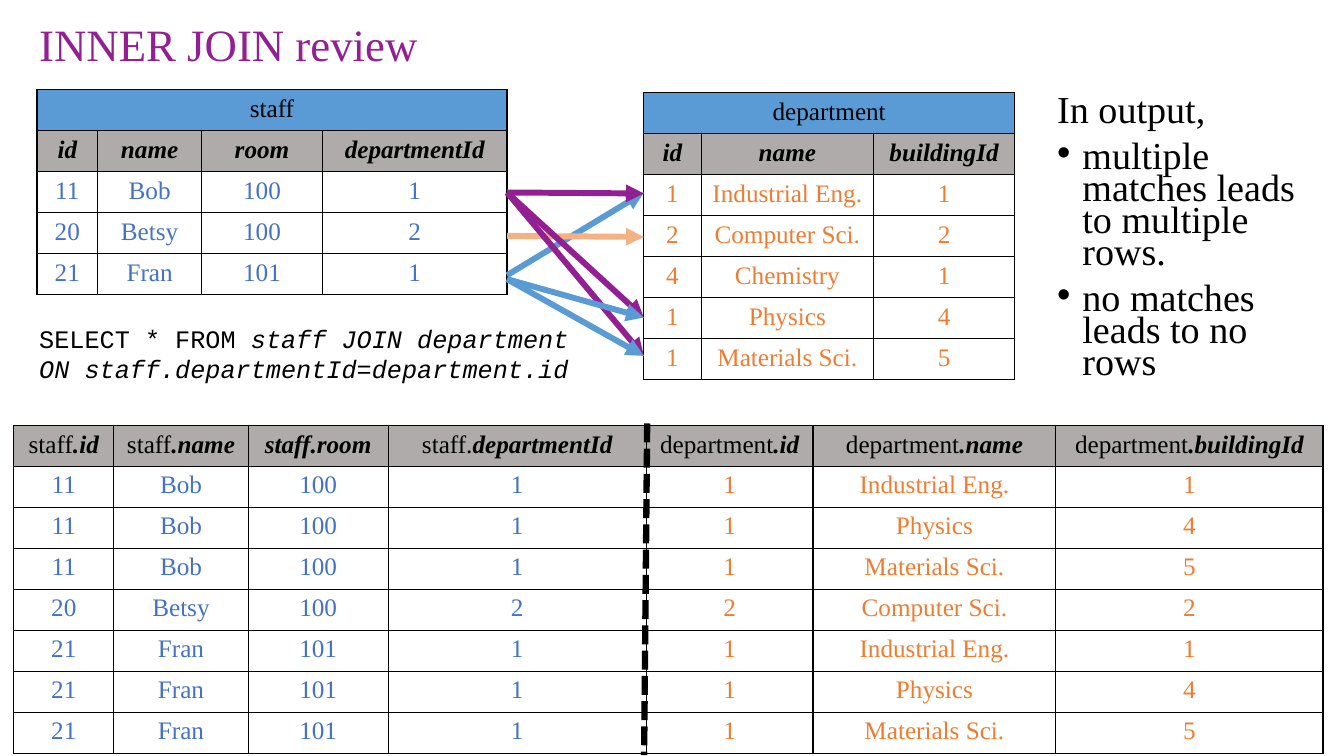
from pptx import Presentation
from pptx.dml.color import RGBColor
from pptx.enum.dml import MSO_LINE
from pptx.enum.shapes import MSO_CONNECTOR
from pptx.enum.text import MSO_ANCHOR, PP_ALIGN
from pptx.oxml import parse_xml
from pptx.oxml.ns import nsdecls, qn
from pptx.util import Pt

CENTER = PP_ALIGN.CENTER
MIDDLE = MSO_ANCHOR.MIDDLE
STRAIGHT = MSO_CONNECTOR.STRAIGHT
SYS_DASH = MSO_LINE.SQUARE_DOT
SERIF, MONO = "Times New Roman", "Courier New"
COLORS = {"black": "000000", "purple": "932092", "sky": "5B9BD5", "peach": "F4B183",
          "gray": "AFABAB", "blue": "4472C4", "orange": "ED7D31"}
ROW_H = 29.3

STAFF = [("11", "Bob", "100", "1"), ("20", "Betsy", "100", "2"), ("21", "Fran", "101", "1")]
DEPARTMENTS = [("1", "Industrial Eng.", "1"), ("2", "Computer Sci.", "2"),
               ("4", "Chemistry", "1"), ("1", "Physics", "4"), ("1", "Materials Sci.", "5")]
JOIN_HEADER = [("staff", ".id"), ("staff", ".name"), ("", "staff.room"),
               ("staff.", "departmentId"), ("department", ".id"),
               ("department", ".name"), ("department", ".buildingId")]
ARROWS = [("sky", 196.6, 137.5), ("purple", 137.5, 138.2), ("peach", 168.5, 169.2),
          ("purple", 137.5, 226.8), ("purple", 137.5, 254.2),
          ("sky", 199.4, 226.8), ("sky", 199.4, 254.2)]


def rgb(name):
    """Return the palette colour called name."""
    return RGBColor.from_string(COLORS[name])


def add_run(p, text, size=18, color="black", font=SERIF, bold=False, italic=False):
    """Add a formatted run to a paragraph."""
    r = p.add_run()
    r.text = text
    r.font.size = Pt(size)
    r.font.name = font
    r.font.color.rgb = rgb(color)
    r.font.bold = bold
    r.font.italic = italic


def add_textbox(s, x, y, w, h):
    """Add a wrapping text box and return its text frame."""
    tf = s.shapes.add_textbox(Pt(x), Pt(y), Pt(w), Pt(h)).text_frame
    tf.word_wrap = True
    return tf


def fill_cell(cell, parts, color="black", fill=None):
    """Write a plain and a bold italic part into a bordered cell."""
    if fill:
        cell.fill.solid()
        cell.fill.fore_color.rgb = rgb(fill)
    else:
        cell.fill.background()
    p = cell.text_frame.paragraphs[0]
    p.alignment = CENTER
    for text, strong in zip(parts, (False, True)):
        if text:
            add_run(p, text, color=color, bold=strong, italic=strong)
    tc_pr = cell._tc.get_or_add_tcPr()
    for i, side in enumerate(("lnL", "lnR", "lnT", "lnB")):
        tc_pr.insert(i, parse_xml(
            f'<a:{side} {nsdecls("a")} w="12700"><a:solidFill>'
            f'<a:srgbClr val="{COLORS["black"]}"/></a:solidFill></a:{side}>'))


def add_grid(s, x, y, widths, header, rows, colors, name=None):
    """Add a table with an optional name row, a header row and coloured columns."""
    top = 1 if name else 0
    n_rows = top + 1 + len(rows)
    tbl = s.shapes.add_table(n_rows, len(widths), Pt(x), Pt(y),
                             Pt(sum(widths)), Pt(n_rows * ROW_H)).table
    tbl.first_row = tbl.horz_banding = False
    for col, width in zip(tbl.columns, widths):
        col.width = Pt(width)
    for row in tbl.rows:
        row.height = Pt(ROW_H)
    if name:
        tbl.cell(0, 0).merge(tbl.cell(0, len(widths) - 1))
        for j in range(len(widths)):
            fill_cell(tbl.cell(0, j), ("" if j else name,), fill="sky")
    for j, parts in enumerate(header):
        fill_cell(tbl.cell(top, j), parts, fill="gray")
    for i, row in enumerate(rows, top + 1):
        for j, text in enumerate(row):
            fill_cell(tbl.cell(i, j), (text,), colors[j])


def add_line(s, x1, y1, x2, y2, color, width, arrow=False):
    """Add a straight line, either with an arrowhead or dashed."""
    c = s.shapes.add_connector(STRAIGHT, Pt(x1), Pt(y1), Pt(x2), Pt(y2))
    c.line.color.rgb = rgb(color)
    c.line.width = Pt(width)
    sp_pr = c._element.spPr
    if arrow:
        sp_pr.find(qn("a:ln")).append(parse_xml(f'<a:tailEnd {nsdecls("a")} type="triangle"/>'))
    else:
        c.line.dash_style = SYS_DASH
    sp_pr.append(parse_xml(f'<a:effectLst {nsdecls("a")}/>'))


def add_title(s, x, y, w, h):
    """Add the slide title."""
    tf = add_textbox(s, x, y, w, h)
    tf.vertical_anchor = MIDDLE
    p = tf.paragraphs[0]
    p.line_spacing = 0.9
    add_run(p, "INNER JOIN review", 32, "purple")


def add_notes_on_output(s, x, y, w, h):
    """Add the lead-in and its two bullets."""
    tf = add_textbox(s, x, y, w, h)
    lines = ["In output,", "multiple matches leads to multiple rows.",
             "no matches leads to no rows"]
    for i, line in enumerate(lines):
        p = tf.add_paragraph() if i else tf.paragraphs[0]
        p.line_spacing = 0.7
        p.space_before = Pt(10)
        add_run(p, line, 27.2)
        if i:
            p_pr = p._p.get_or_add_pPr()
            p_pr.set("marL", str(Pt(18)))
            p_pr.set("indent", str(Pt(-18)))
            p_pr.append(parse_xml(f'<a:buFont {nsdecls("a")} typeface="Arial"/>'))
            p_pr.append(parse_xml(f'<a:buChar {nsdecls("a")} char="•"/>'))


def add_query(s, x, y, w, h):
    """Add the SQL statement."""
    p = add_textbox(s, x, y, w, h).paragraphs[0]
    add_run(p, "SELECT * FROM ", font=MONO)
    add_run(p, "staff JOIN department ON staff.departmentId=department.id",
            font=MONO, italic=True)


def add_sources(s, x, y):
    """Add the two source tables and the arrows between matching rows."""
    staff_w, dept_w = [43.4, 74.2, 86.4, 131.8], [41, 123.1, 100.8]
    left, right = x + sum(staff_w), x + 433.5
    add_grid(s, x, y, staff_w, [("", t) for t in ("id", "name", "room", "departmentId")],
             STAFF, ["blue"] * 4, "staff")
    add_grid(s, right, y + 2.2, dept_w, [("", t) for t in ("id", "name", "buildingId")],
             DEPARTMENTS, ["orange"] * 3, "department")
    for color, start, end in ARROWS:
        add_line(s, left, start, right, end, color, 4.25, arrow=True)


def add_join(s, x, y):
    """Add the joined table, split by a dashed line."""
    rows = [person + dept for person in STAFF for dept in DEPARTMENTS
            if person[3] == dept[0]]
    widths = [71.5, 96, 100, 184.5, 119, 173.5, 190.8]
    add_grid(s, x, y, widths, JOIN_HEADER, rows, ["blue"] * 4 + ["orange"] * 3)
    split = x + sum(widths[:4])
    add_line(s, split + 0.5, y - 1.4, split - 1.7, y + 235.5, "black", 4.5)


def main():
    """Build the slide and save it."""
    prs = Presentation()
    prs.slide_width, prs.slide_height = Pt(960), Pt(540)
    s = prs.slides.add_slide(prs.slide_layouts[6])
    add_sources(s, 26.4, 64.1)
    add_title(s, 20.9, 5.8, 831.6, 55.4)
    add_notes_on_output(s, 748.1, 66.2, 196.6, 229.7)
    add_join(s, 9.8, 303.9)
    add_query(s, 20.9, 227.5, 403.9, 51.1)
    prs.save("out.pptx")


if __name__ == "__main__":
    main()
